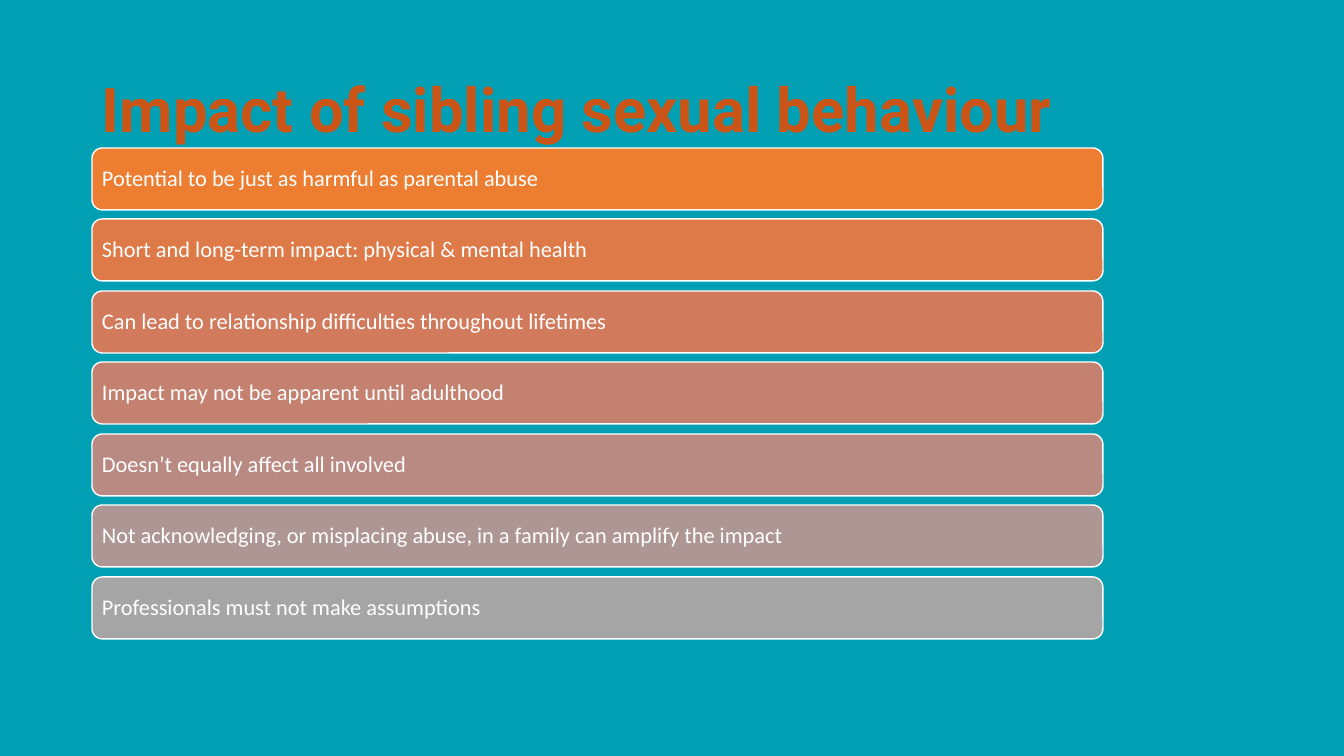
import pptx
import pptx.dml.color
import pptx.enum.shapes
import pptx.enum.text
import pptx.util

PX = 914400 / 100.8
COLORS = {
    "background": "009FB3",
    "title": "CB5517",
    "white": "FFFFFF",
}
IMPACTS = [
    ("Potential to be just as harmful as parental abuse", "ED7D31"),
    ("Short and long-term impact: physical & mental health", "DE7A47"),
    ("Can lead to relationship difficulties throughout lifetimes", "D17B5C"),
    ("Impact may not be apparent until adulthood", "C48170"),
    ("Doesn’t equally affect all involved", "B98A82"),
    ("Not acknowledging, or misplacing abuse, in a family can amplify the impact", "AE9694"),
    ("Professionals must not make assumptions", "A5A5A5"),
]
LEFT = 92
FIRST_TOP, LAST_TOP = 148, 577
BAR_WIDTH, BAR_HEIGHT = 1011, 62


def px(n):
    return pptx.util.Emu(round(n * PX))


def rgb(value):
    return pptx.dml.color.RGBColor.from_string(value)


def write(sp, text, font, size, color, inset, bold=False):
    tf = sp.text_frame
    tf.word_wrap = True
    tf.vertical_anchor = pptx.enum.text.MSO_ANCHOR.MIDDLE
    tf.margin_left = tf.margin_right = px(inset)
    tf.margin_top = tf.margin_bottom = px(min(inset, 7))
    p = tf.paragraphs[0]
    p.text = text
    p.alignment = pptx.enum.text.PP_ALIGN.LEFT
    p.line_spacing = 0.9
    p.font.name = font
    p.font.size = pptx.util.Pt(size)
    p.font.bold = bold
    p.font.color.rgb = rgb(color)


def add_title(s, text):
    sp = s.shapes.add_textbox(px(LEFT), px(40), px(1159), px(146))
    write(sp, text, "Roboto", 44, COLORS["title"], 10, bold=True)


def add_bar(s, top, text, fill):
    sp = s.shapes.add_shape(
        pptx.enum.shapes.MSO_SHAPE.ROUNDED_RECTANGLE,
        px(LEFT), px(top), px(BAR_WIDTH), px(BAR_HEIGHT),
    )
    sp.shadow.inherit = False
    sp.fill.solid()
    sp.fill.fore_color.rgb = rgb(fill)
    sp.line.color.rgb = rgb(COLORS["white"])
    sp.line.width = pptx.util.Pt(1)
    write(sp, text, "Calibri", 16, COLORS["white"], 7)


def main():
    prs = pptx.Presentation()
    prs.slide_width, prs.slide_height = px(1344), px(756)
    s = prs.slides.add_slide(prs.slide_layouts[6])
    s.background.fill.solid()
    s.background.fill.fore_color.rgb = rgb(COLORS["background"])
    add_title(s, "Impact of sibling sexual behaviour")
    for i, (text, fill) in enumerate(IMPACTS):
        top = FIRST_TOP + (LAST_TOP - FIRST_TOP) * i // (len(IMPACTS) - 1)
        add_bar(s, top, text, fill)
    prs.save("out.pptx")


if __name__ == "__main__":
    main()
